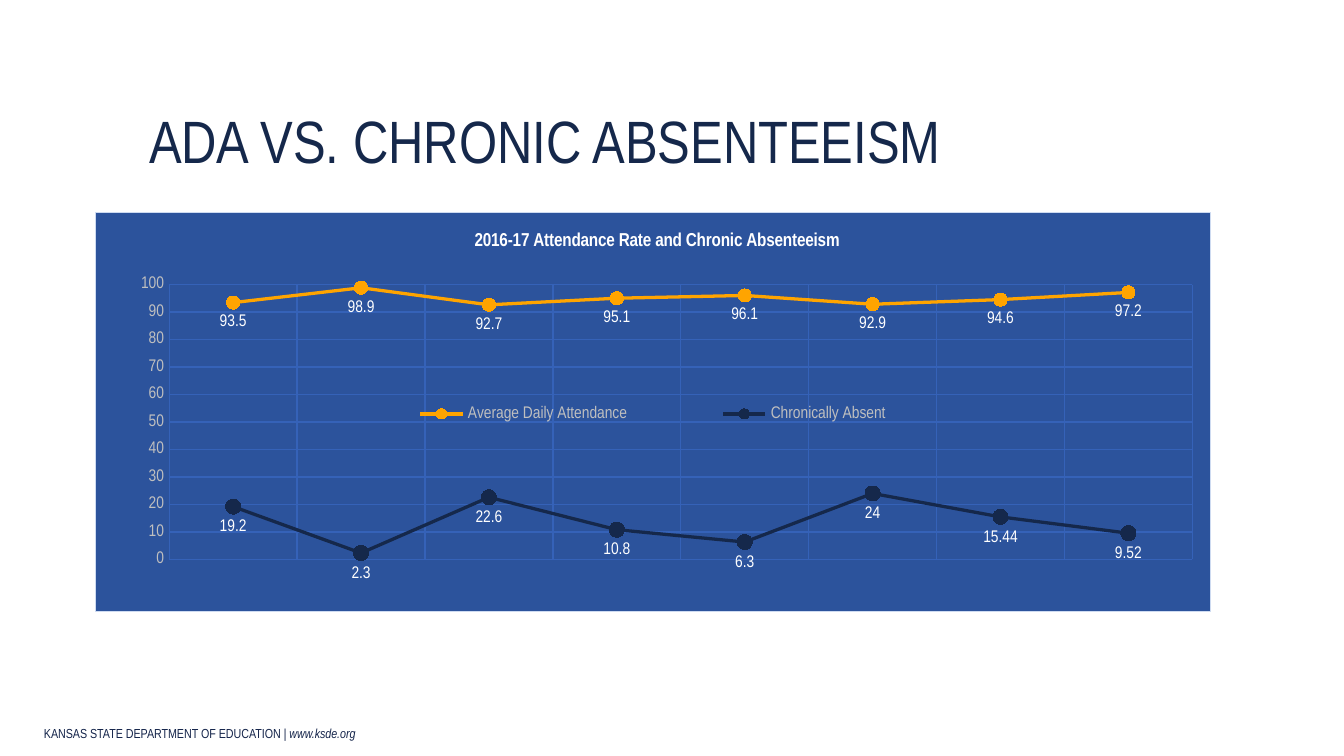
import pptx
import pptx.chart.data
import pptx.dml.color
import pptx.enum.chart
import pptx.enum.text
import pptx.oxml
import pptx.oxml.ns
import pptx.util

EMU_PER_PX = 914400 / 134.4


class Theme:
    font = "Arial Narrow"
    navy = "15284B"
    footer = "15254B"
    panel = "2C539C"
    border = "CEDBF1"
    grid = "3562B8"
    orange = "FFA400"
    grey = "BFBFBF"
    white = "FFFFFF"
    title_size = 32
    chart_title_size = 10
    label_size = 9
    footer_size = 7


# name, values, colour, marker size
SERIES = [
    ("Average Daily Attendance",
     [93.5, 98.9, 92.7, 95.1, 96.1, 92.9, 94.6, 97.2], Theme.orange, 7),
    ("Chronically Absent",
     [19.2, 2.3, 22.6, 10.8, 6.3, 24, 15.44, 9.52], Theme.navy, 8),
]


def px(n):
    return pptx.util.Emu(round(n * EMU_PER_PX))


def rgb(value):
    return pptx.dml.color.RGBColor.from_string(value)


def set_font(font, size, color, bold=False, italic=False):
    font.name = Theme.font
    font.size = pptx.util.Pt(size)
    font.color.rgb = rgb(color)
    font.bold = bold
    font.italic = italic


def set_line(line, color, width):
    line.color.rgb = rgb(color)
    line.width = pptx.util.Pt(width)


def add_text(slide, box, parts, size, color, left_inset=13, bottom_inset=7):
    """Add one bottom-anchored line; parts are (text, italic) pairs."""
    tf = slide.shapes.add_textbox(*map(px, box)).text_frame
    tf.word_wrap = True
    tf.vertical_anchor = pptx.enum.text.MSO_ANCHOR.BOTTOM
    tf.margin_left = px(left_inset)
    tf.margin_bottom = px(bottom_inset)
    for text, italic in parts:
        r = tf.paragraphs[0].add_run()
        r.text = text
        set_font(r.font, size, color, italic=italic)


def chart_xml(body):
    return pptx.oxml.parse_xml(body.replace(
        ">", " " + pptx.oxml.ns.nsdecls("c", "a") + ">", 1))


def manual_layout(inner=False, **fractions):
    """Layout element placed by fractions of the chart's size."""
    tags = '<c:layoutTarget val="inner"/>' if inner else ""
    tags += '<c:xMode val="edge"/><c:yMode val="edge"/>'
    tags += "".join(f'<c:{k} val="{v}"/>' for k, v in fractions.items())
    return chart_xml(f"<c:layout><c:manualLayout>{tags}</c:manualLayout></c:layout>")


def place(parent, layout, after=None):
    """Replace the layout of a chart part."""
    for old in parent.findall(pptx.oxml.ns.qn("c:layout")):
        parent.remove(old)
    if after is None:
        parent.insert(0, layout)
    else:
        parent.find(pptx.oxml.ns.qn(after)).addnext(layout)


def style_panel(chart):
    space = chart.element
    space.find(pptx.oxml.ns.qn("c:chart")).addnext(chart_xml(
        f'<c:spPr><a:solidFill><a:srgbClr val="{Theme.panel}"/></a:solidFill>'
        f'<a:ln w="9525"><a:solidFill><a:srgbClr val="{Theme.border}"/>'
        '</a:solidFill></a:ln></c:spPr>'))
    plot_area = space.find(".//" + pptx.oxml.ns.qn("c:plotArea"))
    place(plot_area, manual_layout(inner=True, x=0.066, y=0.181, w=0.918, h=0.689))


def style_title(chart):
    tf = chart.chart_title.text_frame
    tf.text = "2016-17 Attendance Rate and Chronic Absenteeism"
    set_font(tf.paragraphs[0].runs[0].font, Theme.chart_title_size,
             Theme.white, bold=True)
    title = chart.element.find(".//" + pptx.oxml.ns.qn("c:title"))
    place(title, manual_layout(x=0.337, y=0.04), after="c:tx")


def style_legend(chart):
    chart.has_legend = True
    legend = chart.legend
    legend.position = pptx.enum.chart.XL_LEGEND_POSITION.TOP
    legend.include_in_layout = False
    set_font(legend.font, Theme.label_size, Theme.grey)
    place(legend._element, manual_layout(x=0.21, y=0.46, w=0.58, h=0.09),
          after="c:legendPos")


def style_axes(chart):
    values = chart.value_axis
    values.minimum_scale, values.maximum_scale, values.major_unit = 0, 100, 10
    values.major_tick_mark = pptx.enum.chart.XL_TICK_MARK.NONE
    values.format.line.fill.background()
    set_font(values.tick_labels.font, Theme.label_size, Theme.grey)
    chart.category_axis.visible = False
    for axis in (values, chart.category_axis):
        axis.has_major_gridlines = True
        set_line(axis.major_gridlines.format.line, Theme.grid, 0.75)


def style_series(series, color, marker_size):
    series.smooth = False
    set_line(series.format.line, color, 1.75)
    marker = series.marker
    marker.style = pptx.enum.chart.XL_MARKER_STYLE.CIRCLE
    marker.size = marker_size
    marker.format.fill.solid()
    marker.format.fill.fore_color.rgb = rgb(color)
    set_line(marker.format.line, color, 0.75)
    labels = series.data_labels
    labels.show_value = True
    labels.position = pptx.enum.chart.XL_LABEL_POSITION.BELOW
    set_font(labels.font, Theme.label_size, Theme.white)


def add_attendance_chart(slide, box):
    data = pptx.chart.data.CategoryChartData()
    data.categories = [str(n) for n in range(1, 9)]
    for name, values, _, _ in SERIES:
        data.add_series(name, values)
    chart = slide.shapes.add_chart(
        pptx.enum.chart.XL_CHART_TYPE.LINE_MARKERS, *map(px, box), data).chart
    set_font(chart.font, Theme.chart_title_size, Theme.navy)
    chart.plots[0].vary_by_categories = False
    style_panel(chart)
    style_title(chart)
    style_legend(chart)
    style_axes(chart)
    for series, (_, _, color, marker_size) in zip(chart.plots[0].series, SERIES):
        style_series(series, color, marker_size)


def main():
    prs = pptx.Presentation()
    prs.slide_width, prs.slide_height = px(1344), px(756)
    slide = prs.slides.add_slide(prs.slide_layouts[6])

    # Footer
    add_text(slide, (31, 718, 641, 30),
             [("KANSAS STATE DEPARTMENT OF EDUCATION ", False),
              ("| www.ksde.org", True)],
             Theme.footer_size, Theme.footer)

    # Heading
    add_text(slide, (95, 89, 1116, 86),
             [("ADA VS. CHRONIC ABSENTEEISM", False)],
             Theme.title_size, Theme.navy, left_inset=54, bottom_inset=0)

    # Attendance chart
    add_attendance_chart(slide, (95, 212, 1116, 400))

    prs.save("out.pptx")


if __name__ == "__main__":
    main()
